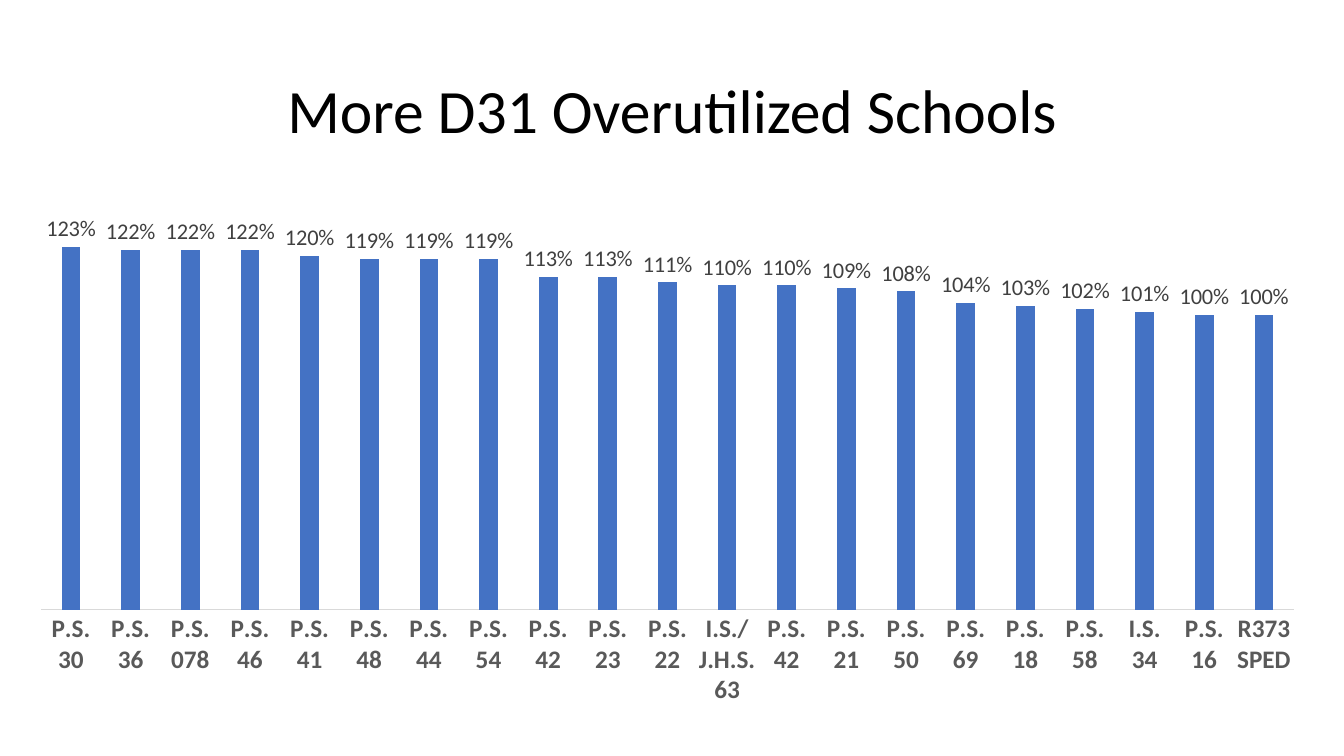
"""Build a slide charting the overutilized schools of District 31."""
from pptx import Presentation
from pptx.chart.data import CategoryChartData
from pptx.dml.color import RGBColor
from pptx.enum import chart as charts, text
from pptx.util import Inches, Pt

FONT = "Calibri"
UTILIZATION = [
    ("P.S. 30", 1.23), ("P.S. 36", 1.22), ("P.S. 078", 1.22),
    ("P.S. 46", 1.22), ("P.S. 41", 1.20), ("P.S. 48", 1.19),
    ("P.S. 44", 1.19), ("P.S. 54", 1.19), ("P.S. 42", 1.13),
    ("P.S. 23", 1.13), ("P.S. 22", 1.11), ("I.S./J.H.S. 63", 1.10),
    ("P.S. 42", 1.10), ("P.S. 21", 1.09), ("P.S. 50", 1.08),
    ("P.S. 69", 1.04), ("P.S. 18", 1.03), ("P.S. 58", 1.02),
    ("I.S. 34", 1.01), ("P.S. 16", 1.00), ("R373 SPED", 1.00),
]


def rgb(value):
    """Return the colour for a hex string."""
    return RGBColor.from_string(value)


def style_font(font, size, color, bold=False):
    """Set the typeface, size, colour and weight of a font."""
    font.name = FONT
    font.size = Pt(size)
    font.bold = bold
    font.color.rgb = rgb(color)


def add_text(slide, box, content, size=18, color="000000", bold=False,
             align=text.PP_ALIGN.CENTER, spacing=1.0):
    """Add a vertically centred, wrapping text box."""
    frame = slide.shapes.add_textbox(*map(Inches, box)).text_frame
    frame.word_wrap = True
    frame.vertical_anchor = text.MSO_ANCHOR.MIDDLE
    paragraph = frame.paragraphs[0]
    paragraph.alignment = align
    paragraph.line_spacing = spacing
    run = paragraph.add_run()
    run.text = content
    style_font(run.font, size, color, bold)


def style_axes(chart):
    """Show school names below the columns and hide the percentage axis."""
    schools = chart.category_axis
    schools.major_tick_mark = charts.XL_TICK_MARK.NONE
    schools.format.line.color.rgb = rgb("D9D9D9")
    schools.format.line.width = Pt(0.75)
    style_font(schools.tick_labels.font, 18, "595959", bold=True)
    percentages = chart.value_axis
    percentages.minimum_scale = 0
    percentages.maximum_scale = 1.4
    percentages.has_major_gridlines = False
    percentages.visible = False


def style_columns(plot):
    """Set the spacing, colour and value labels of the columns."""
    plot.gap_width = 219
    plot.overlap = -27
    plot.vary_by_categories = False
    columns = plot.series[0]
    columns.format.fill.solid()
    columns.format.fill.fore_color.rgb = rgb("4472C4")
    labels = columns.data_labels
    labels.show_value = True
    labels.number_format = "0%"
    labels.number_format_is_linked = False
    labels.position = charts.XL_LABEL_POSITION.OUTSIDE_END
    style_font(labels.font, 16, "404040")


def add_column_chart(slide, box, rows):
    """Add a column chart of utilization by school."""
    schools, rates = zip(*rows)
    data = CategoryChartData(number_format="0%")
    data.categories = schools
    data.add_series("Series 1", rates)
    chart = slide.shapes.add_chart(
        charts.XL_CHART_TYPE.COLUMN_CLUSTERED, *map(Inches, box), data).chart
    chart.has_title = False
    chart.has_legend = False
    style_font(chart.font, 10, "000000")
    style_axes(chart)
    style_columns(chart.plots[0])


def main():
    """Create the slide and save it."""
    deck = Presentation()
    deck.slide_width = Inches(13.33)
    deck.slide_height = Inches(7.5)
    slide = deck.slides.add_slide(deck.slide_layouts[6])
    add_text(slide, (0.92, 0.4, 11.5, 1.45), "More D31 Overutilized Schools",
             size=44, spacing=0.9)
    add_column_chart(slide, (0.15, 1.85, 12.94, 5.25), UTILIZATION)
    deck.save("out.pptx")


if __name__ == "__main__":
    main()
